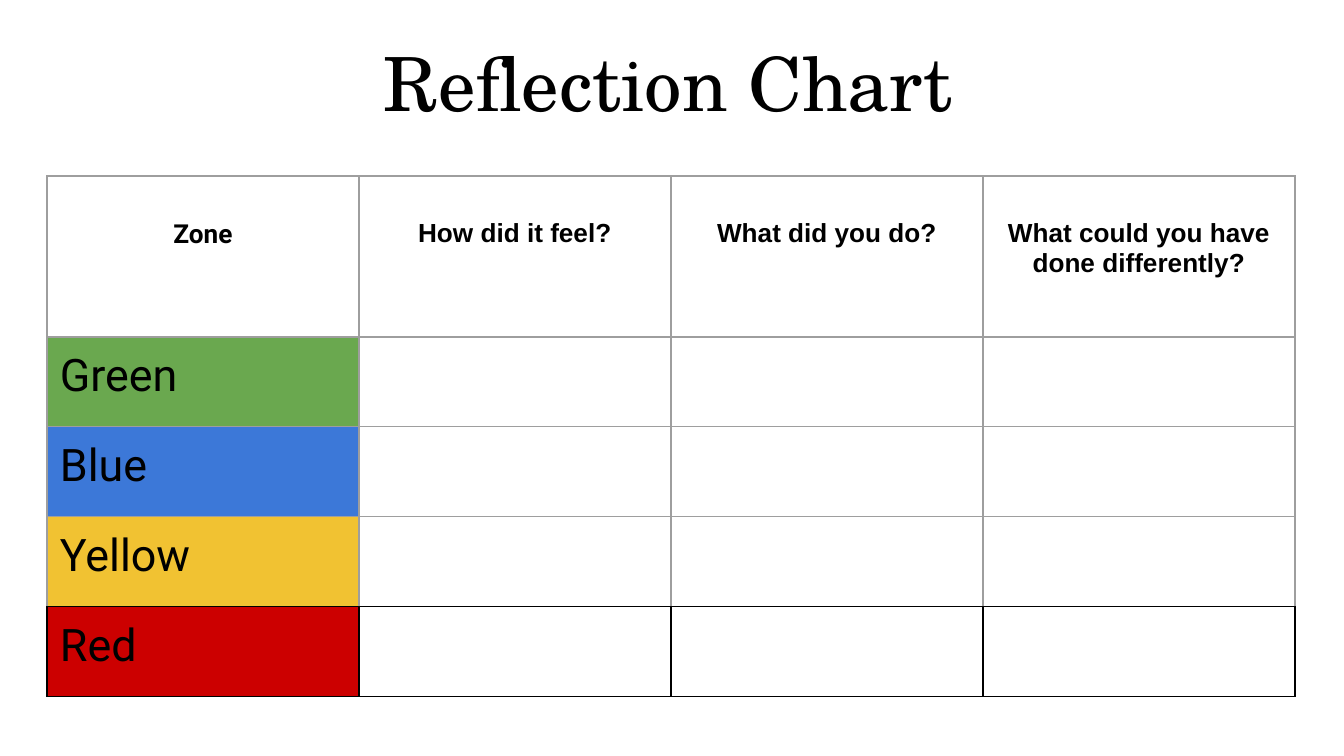
import dataclasses
import typing

import lxml.etree
import pptx
import pptx.dml.color
import pptx.enum.text
import pptx.oxml.ns
import pptx.util

PX = 914400 / 134.4
ALIGN = pptx.enum.text.PP_ALIGN
GREY = "9E9E9E"
BLACK = "000000"
PAD = 13


@dataclasses.dataclass(frozen=True)
class Zone:
    name: str
    fill: str
    edge: str = GREY
    base: str = GREY


HEADS = [
    ("Zone", "Roboto"),
    ("How did it feel?", "Arial"),
    ("What did you do?", "Arial"),
    ("What could you have done differently?", "Arial"),
]
ZONES = [
    Zone("Green", "6AA84F"),
    Zone("Blue", "3C78D8"),
    Zone("Yellow", "F1C232", base=BLACK),
    Zone("Red", "CC0000", edge=BLACK, base=BLACK),
]


def emu(px: int) -> pptx.util.Emu:
    return pptx.util.Emu(round(px * PX))


def rgb(code: str) -> pptx.dml.color.RGBColor:
    return pptx.dml.color.RGBColor.from_string(code)


def write(frame: typing.Any, text: str, *, font: str, size: int,
          bold: bool = False, align: ALIGN = ALIGN.LEFT) -> None:
    para = frame.paragraphs[0]
    para.alignment = align
    run = para.add_run()
    run.text = text
    run.font.name = font
    run.font.size = pptx.util.Pt(size)
    run.font.bold = bold
    run.font.color.rgb = rgb(BLACK)


def pad(box: typing.Any, top: int = PAD) -> None:
    box.margin_left = box.margin_right = box.margin_bottom = emu(PAD)
    box.margin_top = emu(top)


def style(cell: typing.Any, fill: str | None = None, edge: str = GREY,
          base: str = GREY, top: int = PAD) -> None:
    pad(cell, top)
    props = cell._tc.get_or_add_tcPr()
    qn = pptx.oxml.ns.qn
    for side in "LRTB":
        line = lxml.etree.SubElement(
            props, qn(f"a:ln{side}"), w=str(pptx.util.Pt(0.75)))
        solid = lxml.etree.SubElement(line, qn("a:solidFill"))
        lxml.etree.SubElement(
            solid, qn("a:srgbClr"), val=base if side == "B" else edge)
    if fill:
        cell.fill.solid()
        cell.fill.fore_color.rgb = rgb(fill)
    else:
        cell.fill.background()


def add_title(slide: typing.Any) -> None:
    box = slide.shapes.add_textbox(emu(32), emu(24), emu(1273), emu(114))
    box.fill.solid()
    box.fill.fore_color.rgb = rgb("FFFFFF")
    frame = box.text_frame
    frame.word_wrap = True
    pad(frame)
    write(frame, "Reflection Chart", font="TeX Gyre Schola", size=40,
          align=ALIGN.CENTER)


def add_grid(slide: typing.Any) -> None:
    wide, head, high = 312, 161, 90
    cols, rows = len(HEADS), len(ZONES) + 1
    table = slide.shapes.add_table(
        rows, cols, emu(47), emu(176), emu(wide * cols),
        emu(head + high * len(ZONES))).table
    table.first_row = table.horz_banding = False
    for col in table.columns:
        col.width = emu(wide)
    for i, row in enumerate(table.rows):
        row.height = emu(high if i else head)

    for c, (text, font) in enumerate(HEADS):
        cell = table.cell(0, c)
        style(cell, top=PAD + 30)
        write(cell.text_frame, text, font=font, size=14, bold=True,
              align=ALIGN.CENTER)
    for r, zone in enumerate(ZONES, 1):
        for c in range(cols):
            style(table.cell(r, c), None if c else zone.fill,
                  zone.edge, zone.base)
        write(table.cell(r, 0).text_frame, zone.name, font="Roboto", size=24)


def main() -> None:
    deck = pptx.Presentation()
    deck.slide_width, deck.slide_height = emu(1344), emu(756)
    slide = deck.slides.add_slide(deck.slide_layouts[6])
    add_title(slide)
    add_grid(slide)
    deck.save("out.pptx")


if __name__ == "__main__":
    main()
